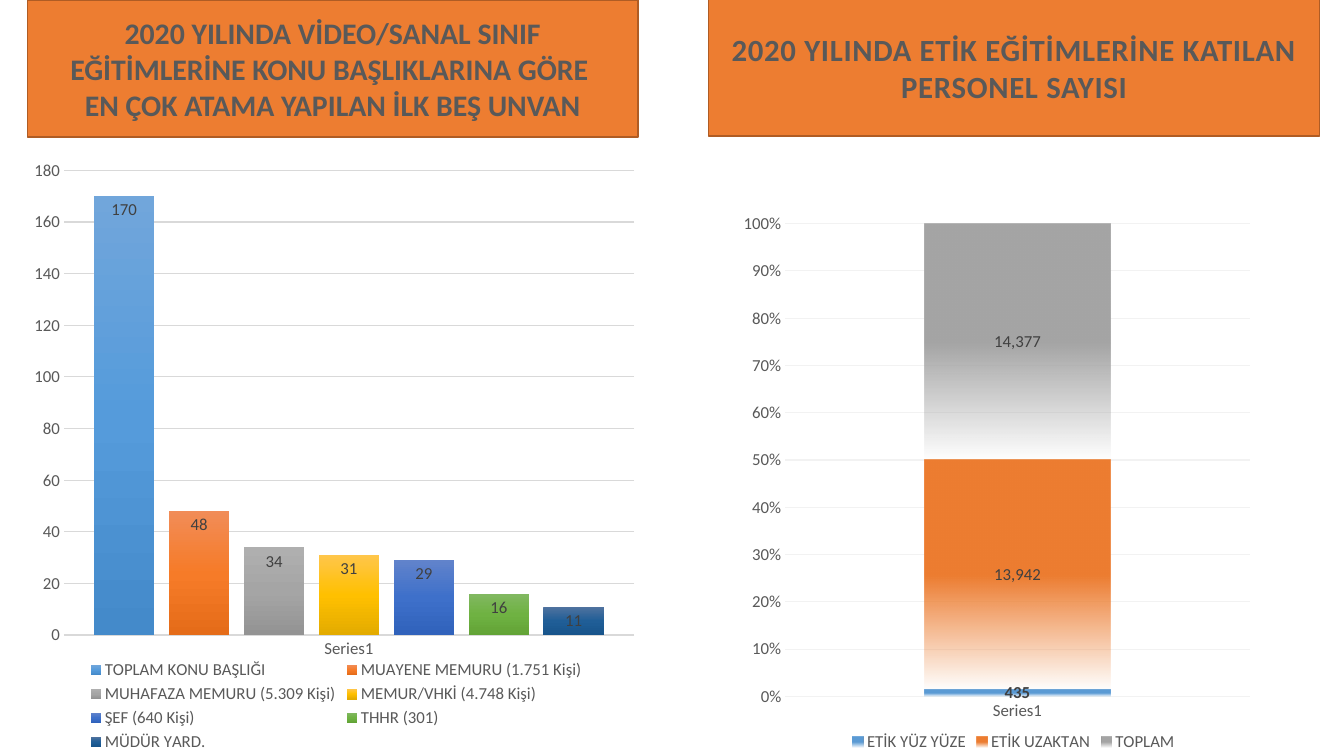
from lxml.etree import SubElement
from pptx import Presentation
from pptx.chart.data import CategoryChartData
from pptx.dml.color import RGBColor
from pptx.enum.chart import XL_CHART_TYPE as ChartType
from pptx.enum.chart import XL_LABEL_POSITION as LabelPosition
from pptx.enum.chart import XL_LEGEND_POSITION as LegendPosition
from pptx.enum.chart import XL_TICK_MARK as TickMark
from pptx.enum.shapes import MSO_SHAPE as Preset
from pptx.enum.text import MSO_ANCHOR as Anchor
from pptx.enum.text import MSO_AUTO_SIZE as AutoSize
from pptx.enum.text import PP_ALIGN as Align
from pptx.oxml.ns import qn
from pptx.util import Inches, Pt

ORANGE = RGBColor(0xED, 0x7D, 0x31)
BROWN = RGBColor(0xAF, 0x5C, 0x24)
TEXT_GRAY = RGBColor(0x59, 0x59, 0x59)
LABEL_GRAY = RGBColor(0x40, 0x40, 0x40)
LINE_GRAY = RGBColor(0xD9, 0xD9, 0xD9)
PALE_GRAY = RGBColor(0xF2, 0xF2, 0xF2)
BLUE = RGBColor(0x5B, 0x9B, 0xD5)
GRAY = RGBColor(0xA5, 0xA5, 0xA5)

TITLES = [
    ("TOPLAM KONU BAŞLIĞI", 170, "71A6DB", "559BDB", "448ACA"),
    ("MUAYENE MEMURU (1.751 Kişi)", 48, "F18C57", "F67B28", "E56C19"),
    ("MUHAFAZA MEMURU (5.309 Kişi)", 34, "AFAFAF", "A5A5A5", "939393"),
    ("MEMUR/VHKİ (4.748 Kişi)", 31, "FFC64B", "FFC000", "E3AB00"),
    ("ŞEF (640 Kişi)", 29, "6183CB", "3E70CA", "3062BB"),
    ("THHR (301)", 16, "81B861", "6FB242", "62A336"),
    ("MÜDÜR YARD.", 11, "51739F", "205E97", "17548B"),
]
ETHICS = [
    ("ETİK YÜZ YÜZE", 435, BLUE),
    ("ETİK UZAKTAN", 13942, ORANGE),
    ("TOPLAM", 14377, GRAY),
]


def assign(target, values):
    for name, value in values.items():
        setattr(target, name, value)


class TrainingPage:
    font_name = "Calibri"

    def __init__(self, deck):
        self.page = deck.slides.add_slide(deck.slide_layouts[5])

    def style_font(self, font, size, color, bold=False):
        assign(font, {"name": self.font_name, "size": Pt(size), "bold": bold})
        font.color.rgb = color

    def banner(self, box, left, top, lines, size, spacing=0):
        assign(box, {"left": Inches(left), "top": Inches(top),
                     "width": Inches(6.06), "height": Inches(1.36)})
        box.shadow.inherit = False
        box.fill.solid()
        box.fill.fore_color.rgb = ORANGE
        box.line.color.rgb = BROWN
        box.line.width = Pt(1)
        frame = box.text_frame
        assign(frame, {"word_wrap": True, "auto_size": AutoSize.NONE,
                       "vertical_anchor": Anchor.MIDDLE})
        frame.text = "\n".join(lines)
        for para in frame.paragraphs:
            para.alignment = Align.CENTER
            span = para.runs[0]
            self.style_font(span.font, size, TEXT_GRAY, True)
            if spacing:
                span.font._element.set("spc", str(spacing))

    def gradient(self, series, stops):
        series.format.fill.solid()
        properties = series._element.find(qn("c:spPr"))
        solid = properties.find(qn("a:solidFill"))
        fill = properties.makeelement(qn("a:gradFill"), {"rotWithShape": "1"})
        properties.replace(solid, fill)
        stop_list = SubElement(fill, qn("a:gsLst"))
        for position, color, opacity in stops:
            stop = SubElement(stop_list, qn("a:gs"), pos=str(position * 1000))
            tint = SubElement(stop, qn("a:srgbClr"), val=str(color))
            if opacity < 100:
                SubElement(tint, qn("a:alpha"), val=str(opacity * 1000))
        SubElement(fill, qn("a:lin"), ang="5400000", scaled="0")

    def place_plot(self, chart, bounds):
        area = chart._chartSpace.chart.plotArea
        for old in area.findall(qn("c:layout")):
            area.remove(old)
        layout = area.makeelement(qn("c:layout"), {})
        area.insert(0, layout)
        manual = SubElement(layout, qn("c:manualLayout"))
        settings = {"layoutTarget": "inner", "xMode": "edge", "yMode": "edge"}
        settings.update(zip("xywh", bounds))
        for name, value in settings.items():
            SubElement(manual, qn(f"c:{name}"), val=str(value))

    def column_chart(self, kind, place, rows, bounds, gap, overlap,
                     axis_format, grid_color):
        data = CategoryChartData(number_format="#,##0")
        data.categories = ["Series1"]
        for name, value, *_ in rows:
            data.add_series(name, [value])
        lengths = [Inches(length) for length in place]
        chart = self.page.shapes.add_chart(kind, *lengths, data).chart
        assign(chart, {"has_title": False, "has_legend": True})
        self.style_font(chart.font, 12, TEXT_GRAY)
        assign(chart.legend, {"position": LegendPosition.BOTTOM,
                              "include_in_layout": False})
        self.style_font(chart.legend.font, 12, TEXT_GRAY)
        assign(chart.plots[0], {"gap_width": gap, "overlap": overlap,
                                "vary_by_categories": False})
        for axis in (chart.category_axis, chart.value_axis):
            assign(axis, {"major_tick_mark": TickMark.NONE,
                          "minor_tick_mark": TickMark.NONE})
            self.style_font(axis.tick_labels.font, 12, TEXT_GRAY)
            axis.format.line.fill.background()
        assign(chart.value_axis.tick_labels,
               {"number_format": axis_format, "number_format_is_linked": False})
        grid = chart.value_axis.major_gridlines.format.line
        grid.color.rgb = grid_color
        grid.width = Pt(0.75)
        self.place_plot(chart, bounds)
        return chart

    def label(self, series, bold=False):
        labels = series.data_labels
        assign(labels, {"show_value": True, "number_format": "#,##0",
                        "number_format_is_linked": False})
        self.style_font(labels.font, 12, LABEL_GRAY, bold)
        return labels

    def titles_chart(self):
        chart = self.column_chart(
            ChartType.COLUMN_CLUSTERED, (0, 1.48, 6.67, 6.02), TITLES,
            (0.095, 0.035, 0.848, 0.766), 100, -24, "#,##0", LINE_GRAY)
        line = chart.category_axis.format.line
        line.color.rgb = LINE_GRAY
        line.width = Pt(1)
        for series, (_, _, *colors) in zip(chart.plots[0].series, TITLES):
            self.gradient(series, [(50 * step, color, 100)
                                   for step, color in enumerate(colors)])
            self.label(series).position = LabelPosition.INSIDE_END

    def ethics_chart(self):
        chart = self.column_chart(
            ChartType.COLUMN_STACKED_100, (6.95, 1.41, 6.21, 6.09), ETHICS,
            (0.135, 0.133, 0.742, 0.77), 150, 100, "0%", PALE_GRAY)
        for series, (_, value, color) in zip(chart.plots[0].series, ETHICS):
            self.gradient(series, [(50, color, 100), (100, color, 0)])
            self.label(series, bold=value == 435)


def main():
    deck = Presentation()
    assign(deck, {"slide_width": Inches(13.33), "slide_height": Inches(7.5)})
    training = TrainingPage(deck)
    shapes = training.page.shapes
    training.titles_chart()
    training.banner(shapes.title, 0.27, 0, [
        "2020 YILINDA VİDEO/SANAL SINIF EĞİTİMLERİNE KONU BAŞLIKLARINA GÖRE ",
        "EN ÇOK ATAMA YAPILAN İLK BEŞ UNVAN"], 21.3)
    training.ethics_chart()
    ethics_banner = shapes.add_shape(Preset.RECTANGLE, 0, 0, 0, 0)
    training.banner(ethics_banner, 7.03, -0.01, [
        "2020 YILINDA ETİK EĞİTİMLERİNE KATILAN PERSONEL SAYISI"], 22, 50)
    deck.save("out.pptx")


if __name__ == "__main__":
    main()
